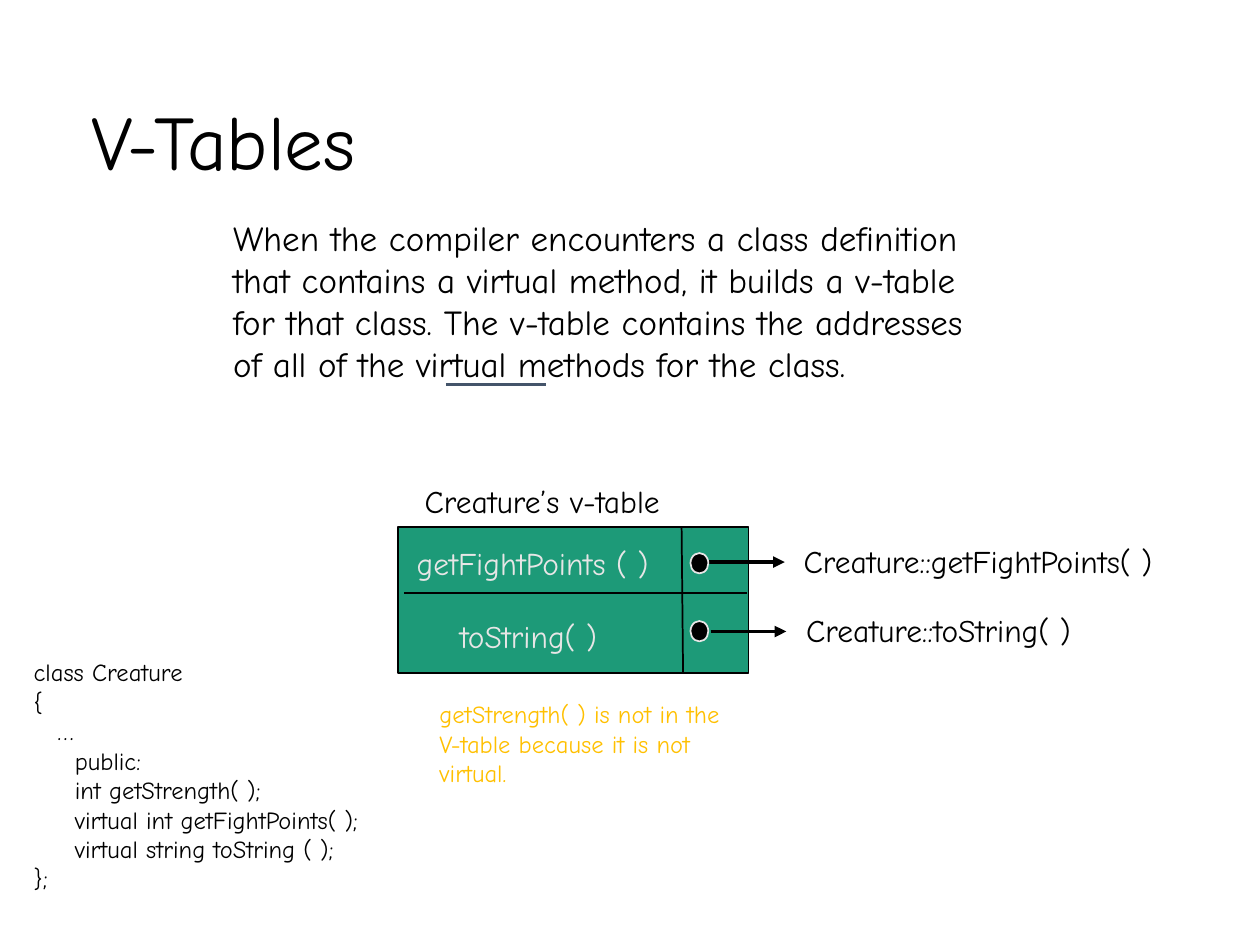
from dataclasses import dataclass

from lxml import etree
from pptx import Presentation
from pptx import util as u
from pptx.dml.color import RGBColor
from pptx.enum import shapes, text
from pptx.oxml.ns import qn


@dataclass(frozen=True)
class Theme:
    font: str = "Comic Neue"
    ink: str = "000000"
    pale: str = "E7E6E6"
    green: str = "1D9A78"
    slate: str = "44546A"
    amber: str = "FFC000"
    title: int = 44
    body: int = 20
    label: int = 18
    small: int = 14
    thin: float = 1
    medium: float = 2
    thick: float = 2.25


class Deck:
    """Holds the theme and the current slide."""

    def __init__(self, prs, theme):
        self.theme = theme
        self.slide = prs.slides.add_slide(prs.slide_layouts[6])

    @staticmethod
    def apply(obj, fmt):
        for name, value in fmt.items():
            setattr(obj, name, value)

    def stroke(self, line, color, width):
        line.color.rgb = RGBColor.from_string(color)
        line.width = u.Pt(width)

    def text(self, box, lines, size, color=None, frame=None, para=None, indents=None):
        """Add a text box; indents maps a line number to its left margin in cm."""
        sp = self.slide.shapes.add_textbox(*map(u.Cm, box))
        tf = sp.text_frame
        self.apply(tf, {"word_wrap": True, **(frame or {})})
        for i, line in enumerate(lines):
            p = tf.paragraphs[0] if i == 0 else tf.add_paragraph()
            self.apply(p, para or {})
            if indents and i in indents:
                p._p.get_or_add_pPr().set("marL", str(u.Cm(indents[i])))
            r = p.add_run()
            r.text = line
            self.apply(r.font, {"name": self.theme.font, "size": u.Pt(size)})
            r.font.color.rgb = RGBColor.from_string(color or self.theme.ink)

    def shape(self, kind, box, fill, line):
        sp = self.slide.shapes.add_shape(kind, *map(u.Cm, box))
        sp.shadow.inherit = False
        sp.fill.solid()
        sp.fill.fore_color.rgb = RGBColor.from_string(fill)
        self.stroke(sp.line, line, self.theme.thin)

    def line(self, ends, color, width, arrow=False):
        sp = self.slide.shapes.add_connector(
            shapes.MSO_CONNECTOR.STRAIGHT, *map(u.Cm, ends))
        self.stroke(sp.line, color, width)
        if arrow:
            ln = sp.line._get_or_add_ln()
            etree.SubElement(ln, qn("a:tailEnd"), type="triangle")
        etree.SubElement(sp._element.spPr, qn("a:effectLst"))


def main():
    prs = Presentation()
    prs.slide_width, prs.slide_height = u.Cm(25.4), u.Cm(19.05)
    t = Theme()
    deck = Deck(prs, t)

    # Title and explanation
    deck.text((1.6, 1.35, 11.07, 3.18), ["V-Tables"], t.title,
              frame={"vertical_anchor": text.MSO_ANCHOR.MIDDLE},
              para={"line_spacing": 0.9})
    deck.text((4.45, 4.24, 17.42, 3.68), [
        "When the compiler encounters a class definition",
        "that contains a virtual method, it builds a v-table",
        "for that class. The v-table contains the addresses",
        "of all of the virtual methods for the class.",
    ], t.body)

    # Class listing
    members = ["public:", "int getStrength( );",
               "virtual int getFightPoints( );", "virtual string toString ( );"]
    indents = {2: 0.48, **{3 + i: 0.83 for i in range(len(members))}}
    deck.text((0.43, 13.13, 7.75, 5.05),
              ["class Creature", "{", "…", *members, "};"],
              t.small, indents=indents)

    # V-table frame with its dividers and caption
    deck.shape(shapes.MSO_SHAPE.RECTANGLE, (8.03, 10.62, 7.06, 2.95), t.green, t.ink)
    for ends in ((8.15, 11.96, 15.06, 11.96), (13.74, 10.62, 13.77, 13.57)):
        deck.line(ends, t.ink, t.thin)
    deck.text((8.31, 9.6, 5.92, 1.02), ["Creature’s v-table"], t.label)

    # Entries: method name, pointer and target
    label_h, dot_w, dot_h, arrow_len = 1.02, 0.36, 0.41, 1.52
    entries = [
        ("getFightPoints ( )", (8.15, 10.85, 5.74), (14.3, 11.33), 11.15,
         "Creature::getFightPoints( )", (15.95, 10.8, 8.61)),
        ("toString( )", (9.02, 12.32, 3.73), (14.33, 12.73), 12.52,
         "Creature::toString( )", (16, 12.19, 6.78)),
    ]
    for method, method_at, (x, y), dot_y, target, target_at in entries:
        deck.text((*method_at, label_h), [method], t.label, t.pale)
        deck.line((x, y, x + arrow_len, y), t.ink, t.thick, arrow=True)
        deck.shape(shapes.MSO_SHAPE.OVAL, (13.92, dot_y, dot_w, dot_h), t.ink, t.pale)
        deck.text((*target_at, label_h), [target], t.label)

    # Underline and side note
    deck.line((8.99, 7.75, 11, 7.75), t.slate, t.medium)
    deck.text((8.61, 13.97, 6.88, 2.06), [
        "getStrength( ) is not in the",
        "V-table because it is not",
        "virtual.",
    ], t.small, t.amber)

    prs.save("out.pptx")


if __name__ == "__main__":
    main()
